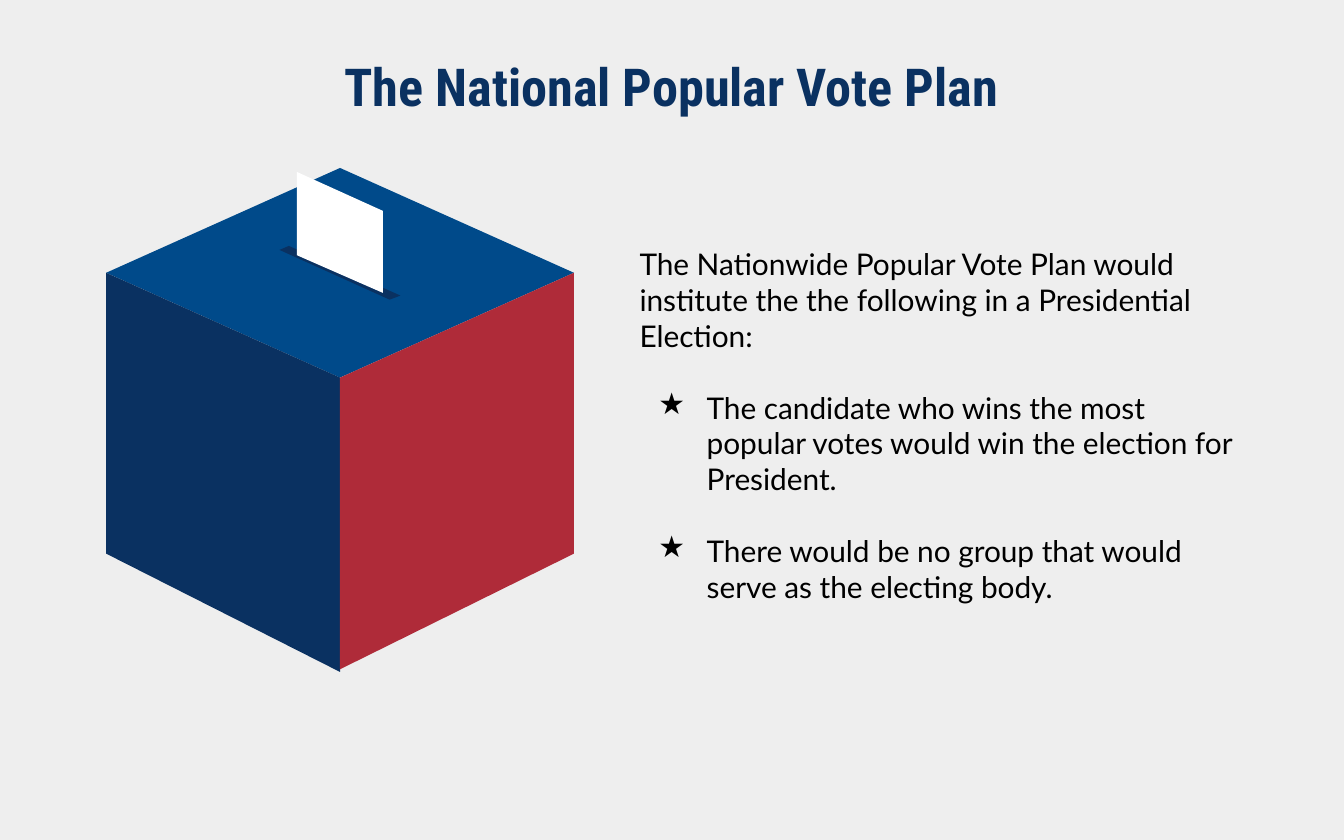
from lxml.etree import SubElement
from pptx import Presentation
from pptx.dml.color import RGBColor
from pptx.enum.text import MSO_ANCHOR, MSO_AUTO_SIZE, PP_ALIGN
from pptx.oxml.ns import qn
from pptx.util import Inches, Pt

BACKGROUND = RGBColor(0xEE, 0xEE, 0xEE)
NAVY = RGBColor(0x0A, 0x31, 0x61)
BLUE = RGBColor(0x00, 0x4A, 0x8A)
RED = RGBColor(0xAF, 0x2B, 0x39)
WHITE = RGBColor(0xFF, 0xFF, 0xFF)
BLACK = RGBColor(0, 0, 0)

TITLE = "The National Popular Vote Plan"
INTRO = ("The Nationwide Popular Vote Plan would institute the the following "
         "in a Presidential Election:")
POINTS = [
    "The candidate who wins the most popular votes would win the election for President.",
    "There would be no group that would serve as the electing body.",
]


def place(shape, box):
    shape.left, shape.top, shape.width, shape.height = map(Inches, box)


def prepare_frame(frame, anchor):
    frame.word_wrap = True
    frame.auto_size = MSO_AUTO_SIZE.NONE
    frame.vertical_anchor = anchor
    frame.margin_left = frame.margin_right = Inches(0.1)
    frame.margin_top = frame.margin_bottom = Inches(0.1)


def add_run(paragraph, text, font_name, size, color, bold=False):
    run = paragraph.add_run()
    run.text = text
    run.font.name = font_name
    run.font.size = Pt(size)
    run.font.color.rgb = color
    run.font.bold = bold


def add_star_bullet(paragraph):
    properties = paragraph._p.get_or_add_pPr()
    properties.set("marL", str(Inches(0.5)))
    properties.set("indent", str(Inches(-0.36)))
    color = SubElement(properties, qn("a:buClr"))
    SubElement(color, qn("a:srgbClr"), val=str(BLACK))
    SubElement(properties, qn("a:buChar"), char="★")


def add_title(slide, box):
    title = slide.shapes.title
    place(title, box)
    prepare_frame(title.text_frame, MSO_ANCHOR.MIDDLE)
    paragraph = title.text_frame.paragraphs[0]
    paragraph.alignment = PP_ALIGN.CENTER
    add_run(paragraph, TITLE, "Roboto Condensed", 28, NAVY, bold=True)


def add_explanation(slide, box):
    frame = slide.shapes.add_textbox(*map(Inches, box)).text_frame
    prepare_frame(frame, MSO_ANCHOR.TOP)
    add_run(frame.paragraphs[0], INTRO, "Lato", 16, BLACK)
    for point in POINTS:
        paragraph = frame.add_paragraph()
        paragraph.space_before = Pt(19.2)
        add_star_bullet(paragraph)
        add_run(paragraph, point, "Lato", 16, BLACK)


def add_polygon(slide, points, color):
    corners = [(Inches(x), Inches(y)) for x, y in points]
    builder = slide.shapes.build_freeform(*corners[0])
    builder.add_line_segments(corners[1:], close=True)
    shape = builder.convert_to_shape()
    shape.shadow.inherit = False
    shape.fill.solid()
    shape.fill.fore_color.rgb = color
    shape.line.fill.background()


def add_ballot_box(slide, box):
    left, top, width, height = box
    right, bottom, middle = left + width, top + height, left + width / 2
    shoulder, front, base = top + 0.78, top + 1.56, top + 2.87

    lid = [(middle, top), (left, shoulder), (middle, front), (right, shoulder)]
    slot = [(left + 1.36, top + 0.58), (left + 1.29, top + 0.61),
            (left + 2.11, top + 0.98), (left + 2.19, top + 0.95)]
    ballot = [(left + 1.42, top + 0.03), (left + 1.42, top + 0.65),
              (left + 2.06, top + 0.93), (left + 2.06, top + 0.32)]
    left_side = [(left, shoulder), (left, base), (middle, bottom), (middle, front)]
    right_side = [(right, shoulder), (middle, front), (middle, bottom - 0.02), (right, base)]

    for points, color in [(lid, BLUE), (slot, NAVY), (ballot, WHITE),
                          (left_side, NAVY), (right_side, RED)]:
        add_polygon(slide, points, color)


def main():
    presentation = Presentation()
    presentation.slide_width = Inches(10)
    presentation.slide_height = Inches(6.25)
    slide = presentation.slides.add_slide(presentation.slide_layouts[5])
    slide.background.fill.solid()
    slide.background.fill.fore_color.rgb = BACKGROUND
    add_title(slide, (0.78, 0.29, 8.43, 0.7))
    add_explanation(slide, (4.66, 1.73, 4.71, 3.55))
    add_ballot_box(slide, (0.79, 1.25, 3.48, 3.75))
    presentation.save("out.pptx")


if __name__ == "__main__":
    main()
